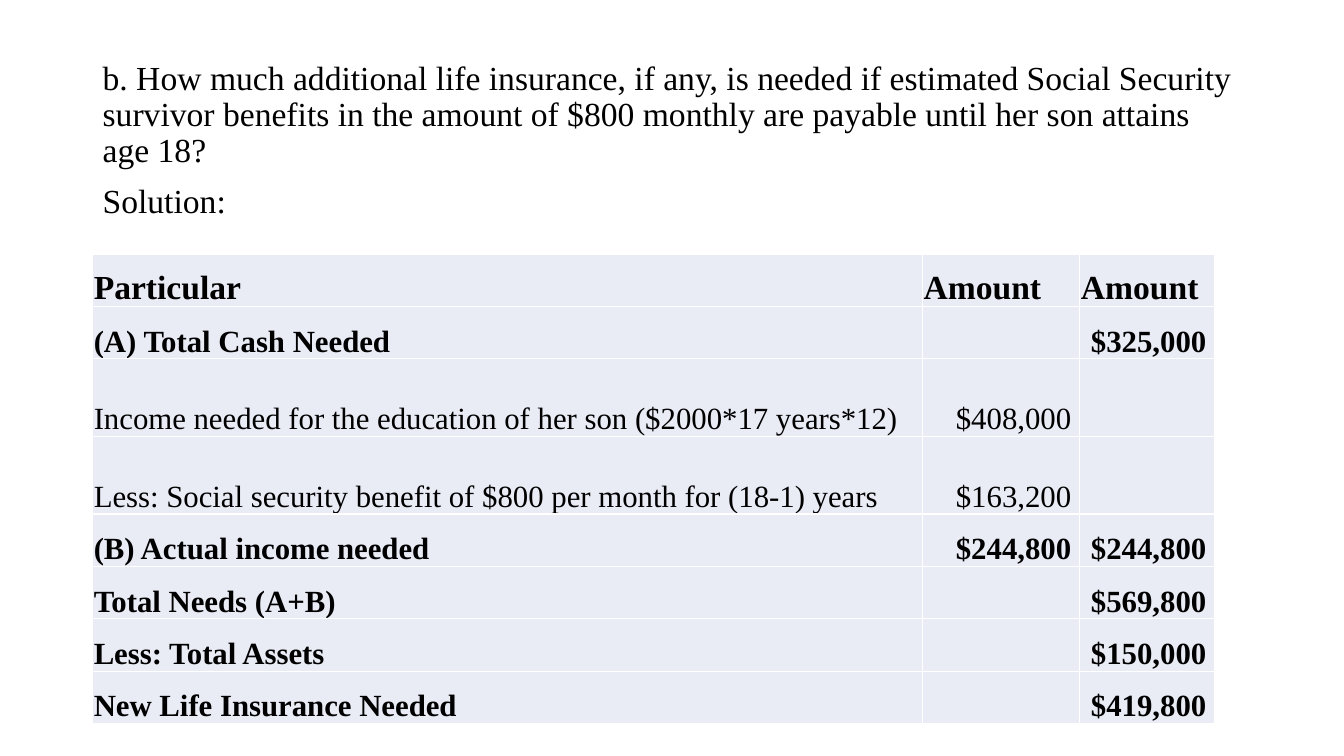
import pptx
import pptx.util
import pptx.dml.color
import pptx.enum.text
import pptx.oxml
import pptx.oxml.ns

Inches = pptx.util.Inches
Pt = pptx.util.Pt
ALIGN = pptx.enum.text.PP_ALIGN
ANCHOR = pptx.enum.text.MSO_ANCHOR

COLORS = {"text": "000000", "cell": "E9EBF5", "border": "FFFFFF"}
FONT = "Times New Roman"

QUESTION = [
    "b. How much additional life insurance, if any, is needed if estimated Social Security "
    "survivor benefits in the amount of $800 monthly are payable until her son attains age 18?",
    "Solution:",
]
COLUMN_WIDTHS = [8.23, 1.56, 1.34]
ROW_HEIGHT, TALL_ROW_HEIGHT = 0.52, 0.77
CALCULATION = [
    ("Particular", "Amount", "Amount"),
    ("(A) Total Cash Needed", "", "$325,000 "),
    ("Income needed for the education of her son ($2000*17 years*12)", "$408,000 ", ""),
    ("Less: Social security benefit of $800 per month for (18-1) years", "$163,200 ", ""),
    ("(B) Actual income needed", "$244,800 ", "$244,800 "),
    ("Total Needs (A+B)", "", "$569,800 "),
    ("Less: Total Assets", "", "$150,000 "),
    ("New Life Insurance Needed", "", "$419,800 "),
]
DETAIL_ROWS = (2, 3)
CELL_FORMAT = {
    "vertical_anchor": ANCHOR.BOTTOM,
    "margin_left": Inches(0.01),
    "margin_right": Inches(0.01),
    "margin_top": Inches(0.01),
    "margin_bottom": Inches(0),
}


def apply_format(target, values):
    for name, value in values.items():
        setattr(target, name, value)


def write_span(para, text, size, bold=False):
    span = para.add_run()
    span.text = text
    apply_format(span.font, {"name": FONT, "size": Pt(size), "bold": bold})
    span.font.color.rgb = pptx.dml.color.RGBColor.from_string(COLORS["text"])


def add_borders(cell):
    properties = cell._tc.get_or_add_tcPr()
    for side in ("lnL", "lnR", "lnT", "lnB"):
        properties.append(pptx.oxml.parse_xml(
            f'<a:{side} {pptx.oxml.ns.nsdecls("a")} w="{Pt(1)}"><a:solidFill>'
            f'<a:srgbClr val="{COLORS["border"]}"/></a:solidFill></a:{side}>'))


def add_question(page, left, top, width, height):
    box = page.shapes.add_textbox(Inches(left), Inches(top), Inches(width), Inches(height))
    frame = box.text_frame
    frame.word_wrap = True
    for index, text in enumerate(QUESTION):
        para = frame.add_paragraph() if index else frame.paragraphs[0]
        apply_format(para, {"line_spacing": 0.9, "space_before": Pt(10 if index else 0)})
        write_span(para, text, 24)


def add_calculation(page, left, top):
    heights = [TALL_ROW_HEIGHT if index in DETAIL_ROWS else ROW_HEIGHT
               for index in range(len(CALCULATION))]
    table = page.shapes.add_table(
        len(heights), len(COLUMN_WIDTHS), Inches(left), Inches(top),
        Inches(sum(COLUMN_WIDTHS)), Inches(sum(heights))).table
    apply_format(table, {"first_row": False, "horz_banding": False})
    for column, width in zip(table.columns, COLUMN_WIDTHS):
        column.width = Inches(width)
    for row_index, texts in enumerate(CALCULATION):
        table.rows[row_index].height = Inches(heights[row_index])
        for column_index, text in enumerate(texts):
            cell = table.cell(row_index, column_index)
            apply_format(cell, CELL_FORMAT)
            add_borders(cell)
            cell.fill.solid()
            cell.fill.fore_color.rgb = pptx.dml.color.RGBColor.from_string(COLORS["cell"])
            if text:
                para = cell.text_frame.paragraphs[0]
                para.alignment = ALIGN.RIGHT if row_index and column_index else ALIGN.LEFT
                write_span(para, text, 22 if row_index else 24, row_index not in DETAIL_ROWS)


def main():
    deck = pptx.Presentation()
    apply_format(deck, {"slide_width": Inches(13.33), "slide_height": Inches(7.5)})
    page = deck.slides.add_slide(deck.slide_layouts[6])
    add_question(page, 0.92, 0.56, 11.5, 6.19)
    add_calculation(page, 0.92, 2.52)
    deck.save("out.pptx")


if __name__ == "__main__":
    main()
